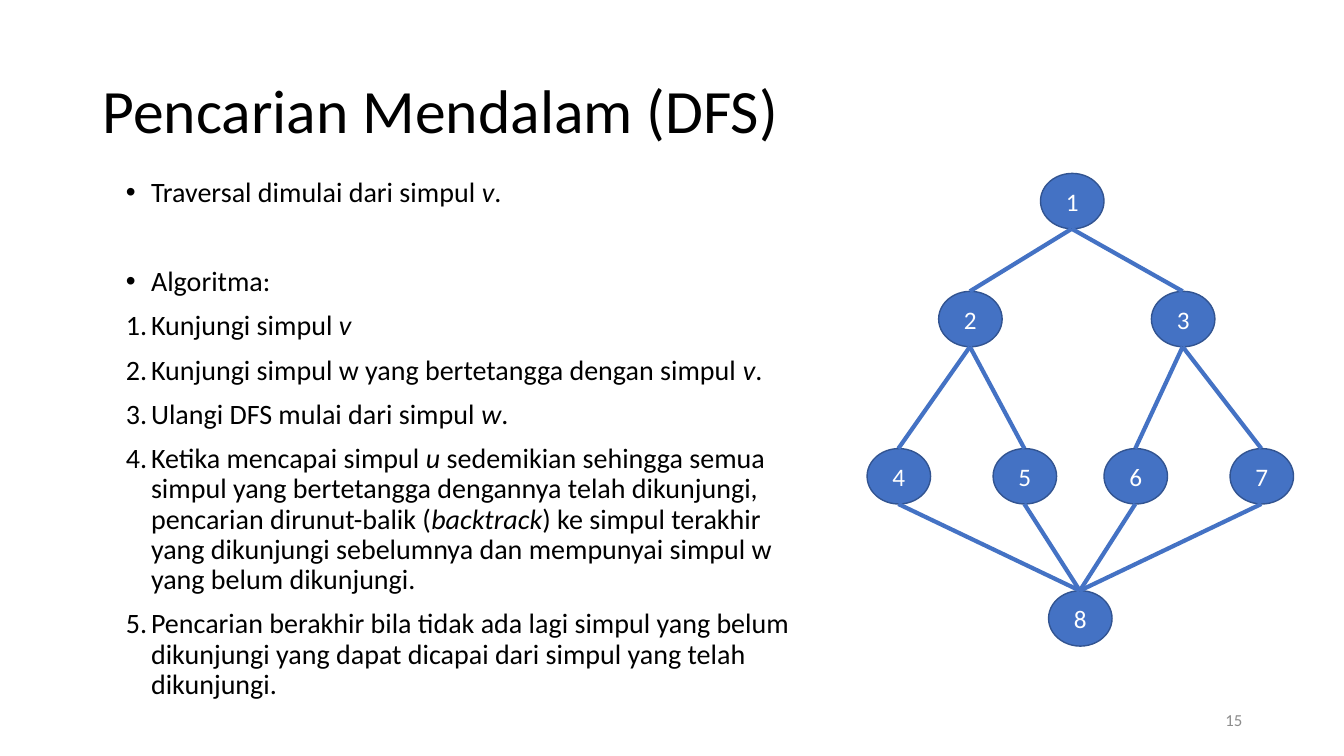
from lxml.etree import SubElement
from pptx import Presentation
from pptx.dml.color import RGBColor
from pptx.enum.shapes import MSO_CONNECTOR as CONN, MSO_SHAPE as SHAPE
from pptx.enum.text import MSO_ANCHOR as ANCHOR, PP_ALIGN as ALIGN
from pptx.oxml.ns import qn
from pptx.util import Pt

PX = 9144  # EMU per px, 100 px to the inch
FONT = "Calibri"
COLORS = {"text": "000000", "number": "8C8C8C", "node": "4472C4",
          "border": "325491", "label": "FFFFFF"}

INTRO = ["Traversal dimulai dari simpul *v*.", "Algoritma:"]
STEPS = [
    "Kunjungi simpul *v*",
    "Kunjungi simpul w yang bertetangga dengan simpul *v*.",
    "Ulangi DFS mulai dari simpul *w*.",
    "Ketika mencapai simpul *u* sedemikian sehingga semua simpul yang "
    "bertetangga dengannya telah dikunjungi, pencarian dirunut-balik "
    "(*backtrack*) ke simpul terakhir yang dikunjungi sebelumnya dan "
    "mempunyai simpul w yang belum dikunjungi.",
    "Pencarian berakhir bila tidak ada lagi simpul yang belum dikunjungi yang "
    "dapat dicapai dari simpul yang telah dikunjungi.",
]

NODE_W, NODE_H = 63, 55
# Top left corner of each node, relative to the graph's box
NODES = {1: (172, 0), 2: (71, 117), 3: (282, 117), 4: (0, 273),
         5: (125, 273), 6: (235, 273), 7: (360, 273), 8: (180, 414)}
EDGES = {1: (2, 3), 2: (4, 5), 3: (6, 7), 4: (8,), 5: (8,), 6: (8,), 7: (8,)}


def px(*lengths):
    return [n * PX for n in lengths]


def rgb(name):
    return RGBColor.from_string(COLORS[name])


def add_runs(p, text, size, color):
    """Add text to a paragraph, with the parts between asterisks in italics."""
    for i, part in enumerate(text.split("*")):
        if part:
            r = p.add_run()
            r.text = part
            style = {"name": FONT, "size": Pt(size), "italic": i % 2 == 1}
            for key, value in style.items():
                setattr(r.font, key, value)
            r.font.color.rgb = rgb(color)


def add_box(s, box, anchor):
    tf = s.shapes.add_textbox(*px(*box)).text_frame
    tf.word_wrap = True
    tf.vertical_anchor = anchor
    return tf


def add_line(s, box, text, size, color, align=ALIGN.LEFT):
    p = add_box(s, box, ANCHOR.MIDDLE).paragraphs[0]
    p.alignment, p.line_spacing = align, 0.9
    add_runs(p, text, size, color)


def add_marker(p, numbered):
    pPr = p._p.get_or_add_pPr()
    indent = 25 * PX
    pPr.set("marL", str(indent))
    pPr.set("indent", str(-indent))
    if numbered:
        SubElement(pPr, qn("a:buFont"), typeface="+mj-lt")
        SubElement(pPr, qn("a:buAutoNum"), type="arabicPeriod")
    else:
        SubElement(pPr, qn("a:buFont"), typeface="Arial")
        SubElement(pPr, qn("a:buChar"), char="•")


def add_algorithm(s, box):
    tf = add_box(s, box, ANCHOR.TOP)
    gaps = [0, 42] + [10] * len(STEPS)
    for i, (text, gap) in enumerate(zip(INTRO + STEPS, gaps)):
        p = tf.add_paragraph() if i else tf.paragraphs[0]
        add_marker(p, numbered=i >= len(INTRO))
        p.line_spacing, p.space_before = 0.9, Pt(gap)
        add_runs(p, text, 20, "text")


def add_node(s, x, y, label):
    sp = s.shapes.add_shape(SHAPE.OVAL, *px(x, y, NODE_W, NODE_H))
    sp.shadow.inherit = False
    sp.fill.solid()
    sp.fill.fore_color.rgb = rgb("node")
    sp.line.color.rgb = rgb("border")
    sp.line.width = Pt(1)
    sp.text_frame.vertical_anchor = ANCHOR.MIDDLE
    p = sp.text_frame.paragraphs[0]
    p.alignment = ALIGN.CENTER
    add_runs(p, label, 18, "label")


def add_edge(s, start, end):
    line = s.shapes.add_connector(CONN.STRAIGHT, *px(*start, *end))
    line.line.color.rgb = rgb("node")
    line.line.width = Pt(3)
    SubElement(line._element.spPr, qn("a:effectLst"))


def add_graph(s, left, top):
    spots = {n: (left + x, top + y) for n, (x, y) in NODES.items()}
    for n, (x, y) in spots.items():
        add_node(s, x, y, str(n))
    half = NODE_W // 2
    for parent, children in EDGES.items():
        x, y = spots[parent]
        for child in children:
            cx, cy = spots[child]
            add_edge(s, (x + half, y + NODE_H), (cx + half, cy))


def main():
    prs = Presentation()
    prs.slide_width, prs.slide_height = px(1333, 750)
    s = prs.slides.add_slide(prs.slide_layouts[6])
    add_line(s, (92, 40, 1150, 145), "Pencarian Mendalam (DFS)", 44, "text")
    add_algorithm(s, (115, 172, 683, 495))
    add_line(s, (942, 695, 300, 40), "15", 12, "number", ALIGN.RIGHT)
    add_graph(s, 860, 172)
    prs.save("out.pptx")


if __name__ == "__main__":
    main()
